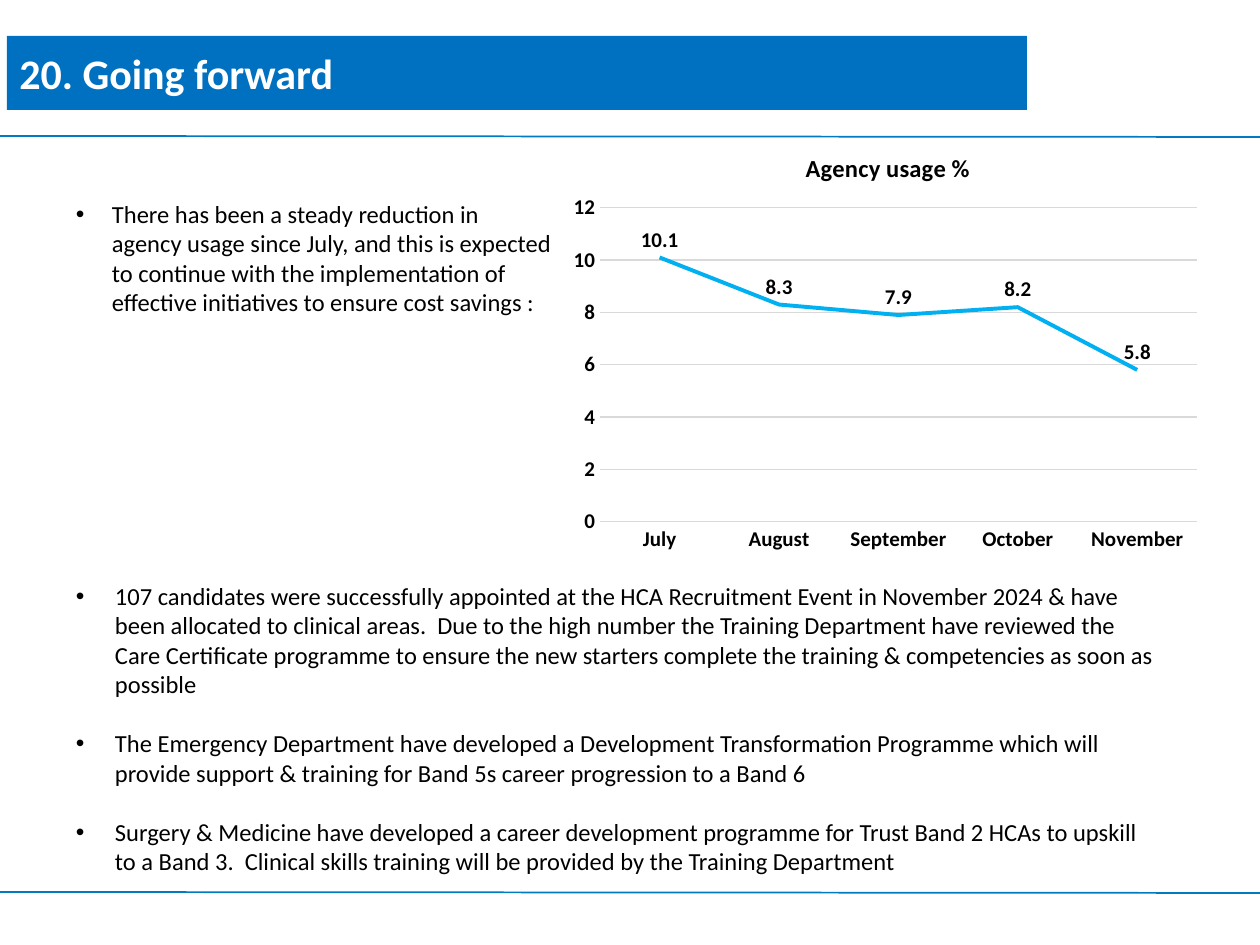
from lxml import etree
from pptx import Presentation
from pptx import util as u
from pptx.chart import data
from pptx.dml.color import RGBColor
from pptx.enum import chart as ch, shapes, text
from pptx.oxml.ns import qn

EMU_PER_PX = 914400 // 126
COLORS = {"rule": "007AC3", "banner": "0070C0", "white": "FFFFFF",
          "black": "000000", "grid": "D9D9D9", "series": "00B0F0"}


def px(value):
    return u.Emu(value * EMU_PER_PX)


class SlideBuilder:
    font_name = "Calibri"

    def __init__(self, slide):
        self.slide = slide

    def color(self, key):
        return RGBColor.from_string(COLORS[key])

    def style(self, font, size, color="black", bold=False):
        font.name, font.size, font.bold = self.font_name, u.Pt(size), bold
        font.color.rgb = self.color(color)

    def stroke(self, line, color, width):
        line.color.rgb = self.color(color)
        line.width = u.Pt(width)

    def rule(self, y):
        rule = self.slide.shapes.add_connector(
            shapes.MSO_CONNECTOR.STRAIGHT, 0, px(y), px(1260), px(y + 1))
        self.stroke(rule.line, "rule", 1)
        etree.SubElement(rule._element.spPr, qn("a:effectLst"))

    def banner(self, x, y, w, h, title):
        banner = self.slide.shapes.add_shape(
            shapes.MSO_SHAPE.RECTANGLE, px(x), px(y), px(w), px(h))
        banner.shadow.inherit = False
        banner.fill.solid()
        banner.fill.fore_color.rgb = self.color("banner")
        banner.line.fill.background()
        frame = banner.text_frame
        frame.text = title
        frame.vertical_anchor = text.MSO_ANCHOR.MIDDLE
        frame.paragraphs[0].alignment = text.PP_ALIGN.LEFT
        self.style(frame.paragraphs[0].runs[0].font, 24, "white", True)

    def bullets(self, x, y, w, h, items, hang, gap=17):
        box = self.slide.shapes.add_textbox(px(x), px(y), px(w), px(h))
        frame = box.text_frame
        frame.word_wrap = True
        frame.margin_left = frame.margin_right = 0
        frame.margin_top = frame.margin_bottom = 0
        frame.text = "\n".join(items)
        for index, paragraph in enumerate(frame.paragraphs):
            props = paragraph._p.get_or_add_pPr()
            props.set("marL", str(px(hang)))
            props.set("indent", str(-px(hang)))
            etree.SubElement(props, qn("a:buFont")).set("typeface", "Arial")
            etree.SubElement(props, qn("a:buChar")).set("char", "•")
            if index:
                paragraph.space_before = u.Pt(gap)
            for run in paragraph.runs:
                self.style(run.font, 14)

    def place(self, parent, index, **fractions):
        """Give a chart part a manual layout in fractions of the chart."""
        layout = parent.find(qn("c:layout"))
        if layout is None:
            layout = etree.Element(qn("c:layout"))
            parent.insert(index, layout)
        manual = etree.SubElement(layout, qn("c:manualLayout"))
        settings = {"xMode": "edge", "yMode": "edge", **fractions}
        if "w" in fractions:
            settings = {"layoutTarget": "inner", **settings}
        for tag, value in settings.items():
            etree.SubElement(manual, qn(f"c:{tag}")).set("val", str(value))

    def line_chart(self, x, y, w, h, title, name, points):
        usage = data.CategoryChartData()
        usage.categories = list(points)
        usage.add_series(name, list(points.values()))
        chart = self.slide.shapes.add_chart(
            ch.XL_CHART_TYPE.LINE, px(x), px(y), px(w), px(h), usage).chart
        chart.has_legend = False
        self.style(chart.font, 12, bold=True)

        # Title and plot area
        heading = chart.chart_title
        heading.text_frame.text = title
        self.style(heading.text_frame.paragraphs[0].runs[0].font, 14, bold=True)
        heading.include_in_layout = False
        self.place(heading.element, 1, x=0.37, y=0.05)
        plot_area = chart.element.find(".//" + qn("c:plotArea"))
        self.place(plot_area, 0, x=0.06, y=0.19, w=0.92, h=0.72)

        # Axes
        months, percent = chart.category_axis, chart.value_axis
        for axis in (months, percent):
            axis.major_tick_mark = axis.minor_tick_mark = ch.XL_TICK_MARK.NONE
            self.style(axis.tick_labels.font, 12, bold=True)
        self.stroke(months.format.line, "grid", 0.75)
        percent.format.line.fill.background()
        percent.minimum_scale, percent.maximum_scale = 0, 12
        percent.major_unit = 2
        self.stroke(percent.major_gridlines.format.line, "grid", 0.75)

        # Series and its labels
        plot = chart.plots[0]
        plot.vary_by_categories = False
        series = plot.series[0]
        series.smooth = False
        series.marker.style = ch.XL_MARKER_STYLE.NONE
        self.stroke(series.format.line, "series", 2.25)
        labels = series.data_labels
        labels.show_value = True
        labels.position = ch.XL_LABEL_POSITION.ABOVE
        self.style(labels.font, 12, bold=True)


def main():
    deck = Presentation()
    deck.slide_width, deck.slide_height = px(1260), px(945)
    page = SlideBuilder(deck.slides.add_slide(deck.slide_layouts[6]))

    # Header and footer
    for y in (136, 892):
        page.rule(y)
    page.banner(7, 36, 1020, 74, "20. Going forward")

    # Agency usage
    page.bullets(76, 199, 480, 120, [
        "There has been a steady reduction in\v"
        "agency usage since July, and this is expected\v"
        "to continue with the implementation of\v"
        "effective initiatives to ensure cost savings :"], hang=36)
    page.line_chart(561, 125, 649, 436, "Agency usage %", "Series 1", {
        "July": 10.1, "August": 8.3, "September": 7.9,
        "October": 8.2, "November": 5.8})

    # Recruitment and development
    page.bullets(76, 581, 1082, 296, [
        "107 candidates were successfully appointed at the HCA Recruitment "
        "Event in November 2024 & have been allocated to clinical areas.  "
        "Due to the high number the Training Department have reviewed the "
        "Care Certificate programme to ensure the new starters complete the "
        "training & competencies as soon as possible",
        "The Emergency Department have developed a Development "
        "Transformation Programme which will provide support & training for "
        "Band 5s career progression to a Band 6",
        "Surgery & Medicine have developed a career development programme "
        "for Trust Band 2 HCAs to upskill to a Band 3.  Clinical skills "
        "training will be provided by the Training Department"], hang=39)

    deck.save("out.pptx")


if __name__ == "__main__":
    main()
